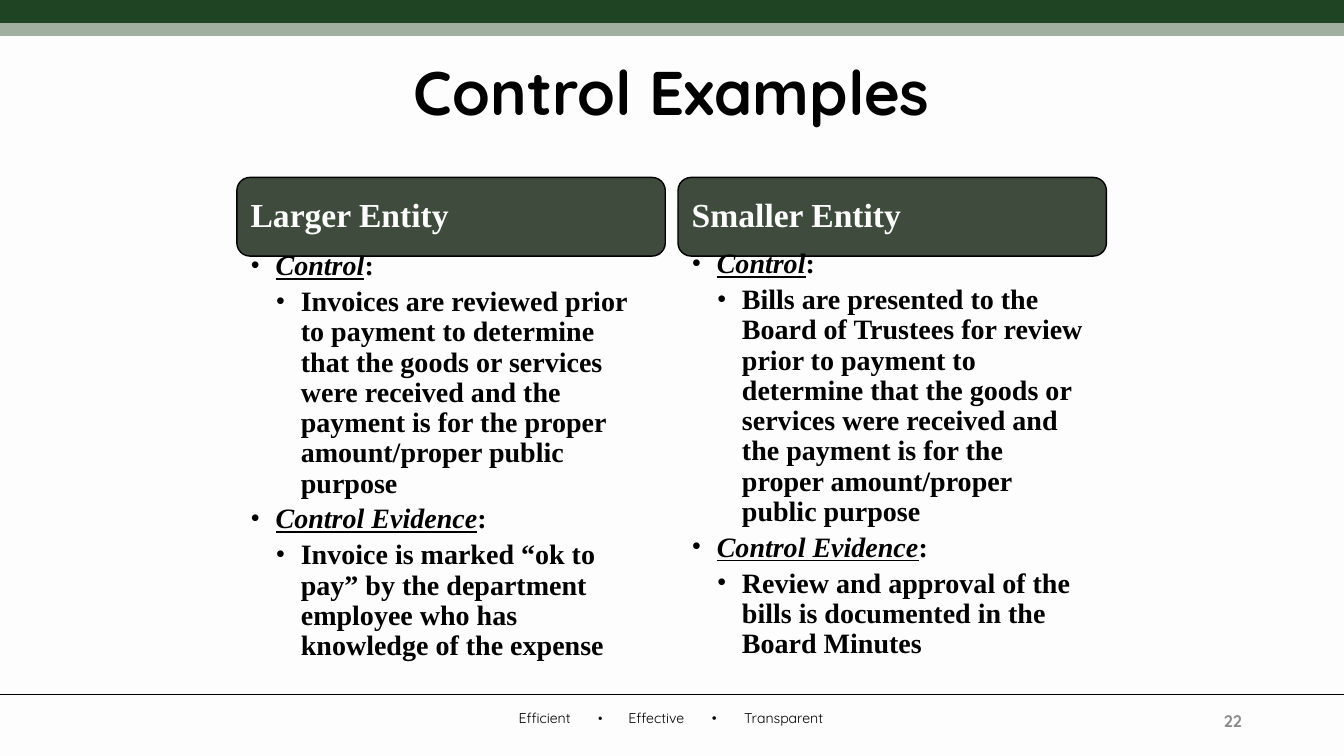
from lxml.etree import SubElement
from pptx import Presentation
from pptx.dml.color import RGBColor
from pptx.enum.shapes import MSO_CONNECTOR, MSO_SHAPE
from pptx.enum.text import MSO_ANCHOR, PP_ALIGN
from pptx.oxml.ns import qn
from pptx.util import Pt

COLORS = {
    "background": "FDFDFD",
    "dark_green": "1F4423",
    "pale_green": "A0AFA0",
    "header": "3E4B3D",
    "black": "000000",
    "gray": "8C8C8C",
}
SANS, SERIF = "Quicksand", "Times New Roman"
WIDTH, HEIGHT = 960, 540
COLUMN_WIDTH = 306
COLUMNS = [
    (169.2, 183.6, "Larger Entity",
     "Invoices are reviewed prior to payment to determine that the goods or "
     "services were received and the payment is for the proper "
     "amount/proper public purpose",
     "Invoice is marked “ok to pay” by the department employee who has "
     "knowledge of the expense"),
    (484.3, 182.2, "Smaller Entity",
     "Bills are presented to the Board of Trustees for review prior to "
     "payment to determine that the goods or services were received and the "
     "payment is for the proper amount/proper public purpose",
     "Review and approval of the bills is documented in the Board Minutes"),
]


def rgb(name):
    return RGBColor.from_string(COLORS[name])


def add_text(p, text, font=SERIF, size=20, color="black", bold=False,
             italic=False, underline=False):
    r = p.add_run()
    r.text = text
    f = r.font
    f.name, f.size, f.bold = font, Pt(size), bold
    f.italic, f.underline = italic, underline
    f.color.rgb = rgb(color)


def add_box(s, left, top, width, height, insets=(7.2, 3.6, 7.2, 3.6),
            anchor=MSO_ANCHOR.MIDDLE):
    """Add an empty wrapped text box and return its text frame."""
    tf = s.shapes.add_textbox(Pt(left), Pt(top), Pt(width), Pt(height)).text_frame
    tf.word_wrap = True
    tf.vertical_anchor = anchor
    tf.margin_left, tf.margin_top, tf.margin_right, tf.margin_bottom = map(Pt, insets)
    return tf


def add_rule(s, y, color, weight):
    line = s.shapes.add_connector(MSO_CONNECTOR.STRAIGHT, Pt(0), Pt(y), Pt(WIDTH), Pt(y))
    line.line.color.rgb = rgb(color)
    line.line.width = Pt(weight)
    SubElement(line._element.spPr, qn("a:effectLst"))


def format_bullet(p, level):
    p.level = level
    p.line_spacing = 0.9
    p.space_after = Pt(4)
    pPr = p._p.get_or_add_pPr()
    pPr.set("marL", str(Pt(18 * (level + 1))))
    pPr.set("indent", str(Pt(-18)))
    SubElement(pPr, qn("a:buFont"), typeface=SERIF)
    SubElement(pPr, qn("a:buChar"), char="•")


def add_header(s, left, text):
    sp = s.shapes.add_shape(MSO_SHAPE.ROUNDED_RECTANGLE, Pt(left), Pt(126.7),
                            Pt(COLUMN_WIDTH), Pt(56.2))
    sp.shadow.inherit = False
    sp.fill.solid()
    sp.fill.fore_color.rgb = rgb("header")
    sp.line.color.rgb = rgb("black")
    sp.line.width = Pt(1)
    tf = sp.text_frame
    tf.word_wrap = True
    tf.vertical_anchor = MSO_ANCHOR.MIDDLE
    tf.margin_left = tf.margin_right = Pt(7.2)
    p = tf.paragraphs[0]
    p.alignment = PP_ALIGN.LEFT
    p.line_spacing = 0.9
    add_text(p, text, size=24, color="background", bold=True)


def add_column(s, left, top, header, control, evidence):
    add_header(s, left, header)
    tf = add_box(s, left, top, COLUMN_WIDTH, 285.1, insets=(9.7, 1.8, 11.5, 1.8))
    p = tf.paragraphs[0]
    for label, detail in (("Control", control), ("Control Evidence", evidence)):
        if p is None:
            p = tf.add_paragraph()
        format_bullet(p, 0)
        add_text(p, label, bold=True, italic=True, underline=True)
        add_text(p, ":", bold=True)
        p = tf.add_paragraph()
        format_bullet(p, 1)
        add_text(p, detail, bold=True)
        p = None


def add_footer(s):
    tf = add_box(s, 221, 503.3, 517.7, 19.4, insets=(149.5, 3.6, 7.2, 3.6),
                 anchor=MSO_ANCHOR.TOP)
    p = tf.paragraphs[0]
    tabs = SubElement(p._p.get_or_add_pPr(), qn("a:tabLst"))
    for stop in (56.5, 78.3, 138, 161):
        SubElement(tabs, qn("a:tab"), pos=str(Pt(stop)), algn="l")
    add_text(p, "Efficient\t", font=SANS, size=10.1)
    add_text(p, "•\t", size=10.1)
    add_text(p, "Effective\t•\tTransparent", font=SANS, size=10.1)


def main():
    prs = Presentation()
    prs.slide_width, prs.slide_height = Pt(WIDTH), Pt(HEIGHT)
    s = prs.slides.add_slide(prs.slide_layouts[6])
    s.background.fill.solid()
    s.background.fill.fore_color.rgb = rgb("background")

    add_rule(s, 7.2, "dark_green", 18)
    add_rule(s, 20.9, "pale_green", 9)
    add_rule(s, 496.1, "black", 0.5)
    add_footer(s)

    p = add_box(s, 66, 28.8, 828, 79.2).paragraphs[0]
    p.alignment = PP_ALIGN.CENTER
    p.line_spacing = 0.9
    add_text(p, "Control Examples", font=SANS, size=44, bold=True)

    for column in COLUMNS:
        add_column(s, *column)

    p = add_box(s, 678.2, 500.4, 216, 28.8).paragraphs[0]
    p.alignment = PP_ALIGN.RIGHT
    add_text(p, "22", font=SANS, size=12, color="gray", bold=True)

    prs.save("out.pptx")


if __name__ == "__main__":
    main()
